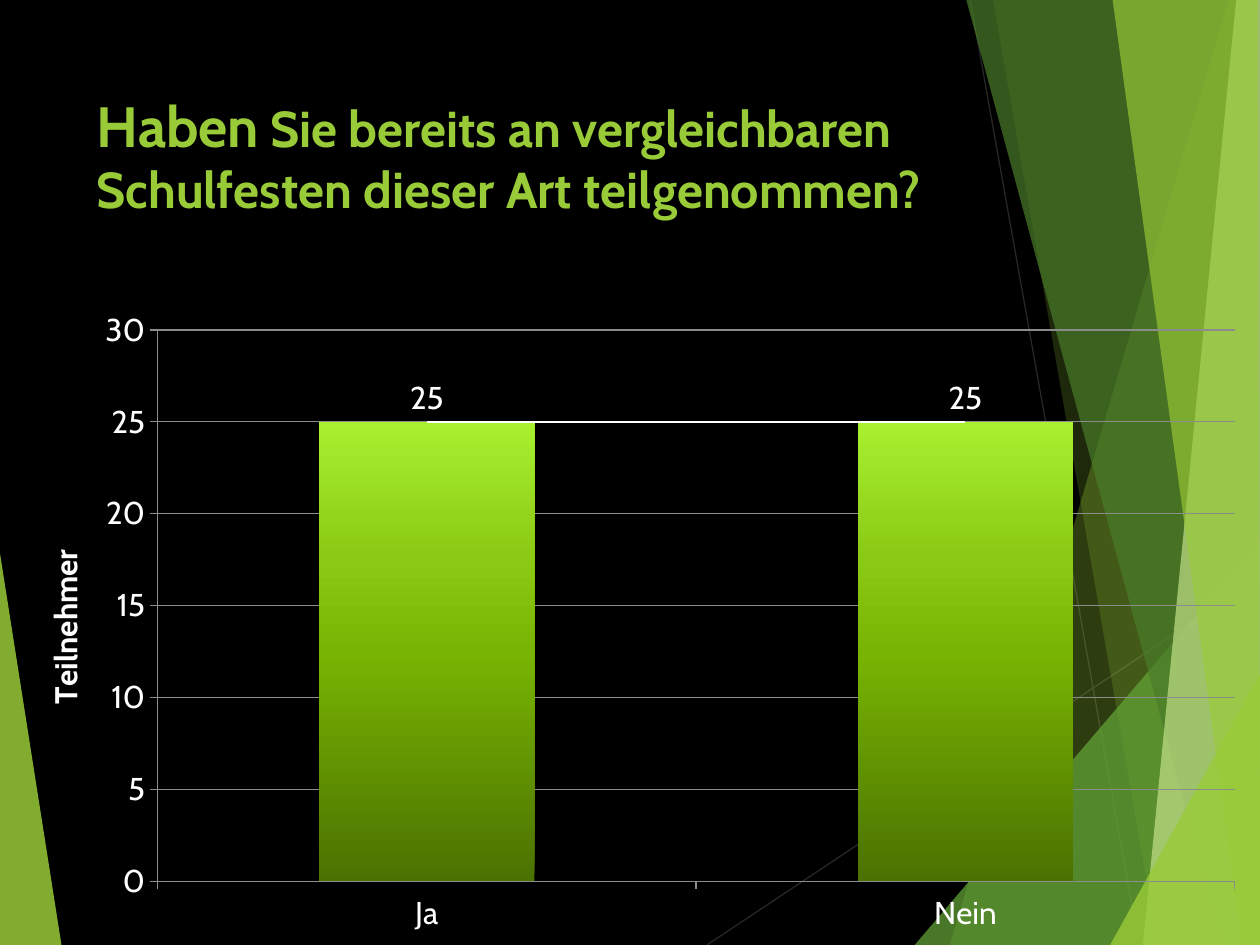
from dataclasses import dataclass

from lxml import etree
from pptx import Presentation
from pptx import util as u
from pptx.chart import data as chart_data
from pptx.dml.color import RGBColor
from pptx.enum import chart as charts, shapes, text
from pptx.oxml import ns, parse_xml

COLORS = {
    "black": "000000",
    "white": "FFFFFF",
    "hairline": "262626",
    "grid": "8C8C8C",
    "lime": "99CB38",
    "green": "63A537",
    "forest": "4A7C29",
    "pale": "C2E088",
}
BAR_STOPS = ((0, "4B7200"), (50, "78B403"), (70, "8AC914"), (100, "A8F030"))
FONT = "Cabin"
WIDTH, HEIGHT = 25.4, 19.05
Point = tuple[float, float]


@dataclass(frozen=True)
class Facet:
    color: str
    opacity: int
    corners: tuple[Point, ...]


@dataclass(frozen=True)
class Ray:
    start: Point
    end: Point


RAYS = (
    Ray((14.25, HEIGHT), (WIDTH, 11.63)),
    Ray((19.56, 0), (22.96, HEIGHT)),
)
FACETS = (
    Facet("lime", 85, ((0, 11.15), (1.24, HEIGHT), (0, HEIGHT))),
    Facet("lime", 30, ((24.77, 0), (19.15, HEIGHT), (WIDTH, HEIGHT), (WIDTH, 0))),
    Facet("lime", 20, ((20.02, 0), (23.34, HEIGHT), (WIDTH, HEIGHT), (WIDTH, 0))),
    Facet("green", 72, ((18.44, HEIGHT), (WIDTH, 10.9), (WIDTH, HEIGHT))),
    Facet("forest", 70, ((19.48, 0), (24.64, HEIGHT), (WIDTH, HEIGHT), (WIDTH, 0))),
    Facet("pale", 70, ((24.92, 0), (23.04, HEIGHT), (WIDTH, HEIGHT), (WIDTH, 0))),
    Facet("lime", 65, ((22.43, 0), (25.04, HEIGHT), (WIDTH, HEIGHT), (25.35, 0))),
    Facet("lime", 80, ((22.38, HEIGHT), (WIDTH, 13.59), (WIDTH, HEIGHT))),
)


def rgb(name: str) -> RGBColor:
    return RGBColor.from_string(COLORS[name])


def style_font(font, size: float, color: str, bold: bool = False) -> None:
    font.name, font.size, font.bold = FONT, u.Pt(size), bold
    font.color.rgb = rgb(color)


def draw_ray(slide, ray: Ray) -> None:
    line = slide.shapes.add_connector(
        shapes.MSO_CONNECTOR.STRAIGHT, *map(u.Cm, ray.start + ray.end)
    )
    line.line.color.rgb = rgb("hairline")
    line.line.width = u.Pt(0.75)
    etree.SubElement(line._element.spPr, ns.qn("a:effectLst"))


def draw_facet(slide, facet: Facet) -> None:
    first, *rest = [(u.Cm(x), u.Cm(y)) for x, y in facet.corners]
    outline = slide.shapes.build_freeform(*first)
    outline.add_line_segments(rest, close=True)
    pane = outline.convert_to_shape()
    pane.shadow.inherit = False
    pane.line.fill.background()
    pane.fill.solid()
    pane.fill.fore_color.rgb = rgb(facet.color)
    tint = pane._element.spPr.find(".//" + ns.qn("a:srgbClr"))
    etree.SubElement(tint, ns.qn("a:alpha"), val=str(facet.opacity * 1000))


def draw_question(slide) -> None:
    question = slide.shapes.add_textbox(
        u.Cm(1.7), u.Cm(1.7), u.Cm(17.63), u.Cm(3.66)
    ).text_frame
    question.word_wrap = True
    question.vertical_anchor = text.MSO_ANCHOR.TOP
    paragraph = question.paragraphs[0]
    for words, size in (
        ("Haben", 32.4),
        (" Sie bereits an vergleichbaren Schulfesten dieser Art teilgenommen?", 28.8),
    ):
        run = paragraph.add_run()
        run.text = words
        style_font(run.font, size, "lime", True)


def manual_layout(**settings: object):
    items = "".join(f'<c:{key} val="{value}"/>' for key, value in settings.items())
    return parse_xml(
        f'<c:layout {ns.nsdecls("c")}><c:manualLayout>{items}</c:manualLayout></c:layout>'
    )


def place_layout(parent, layout, index: int) -> None:
    for previous in parent.findall(ns.qn("c:layout")):
        parent.remove(previous)
    parent.insert(index, layout)


def style_bars(series) -> None:
    stops = "".join(
        f'<a:gs pos="{pos * 1000}"><a:srgbClr val="{color}"/></a:gs>'
        for pos, color in BAR_STOPS
    )
    series.format.fill.background()
    properties = series._element.find(ns.qn("c:spPr"))
    properties.replace(
        properties.find(ns.qn("a:noFill")),
        parse_xml(
            f'<a:gradFill {ns.nsdecls("a")} rotWithShape="1"><a:gsLst>{stops}</a:gsLst>'
            '<a:lin ang="16200000" scaled="0"/></a:gradFill>'
        ),
    )
    trend = parse_xml(
        f'<c:trendline {ns.nsdecls("c", "a")}><c:spPr><a:ln w="19050"><a:solidFill>'
        f'<a:srgbClr val="{COLORS["white"]}"/></a:solidFill></a:ln></c:spPr>'
        '<c:trendlineType val="linear"/><c:dispRSqr val="0"/><c:dispEq val="0"/>'
        "</c:trendline>"
    )
    series._element.find(ns.qn("c:cat")).addprevious(trend)


def draw_answers(slide) -> None:
    answers = chart_data.CategoryChartData()
    answers.categories = ["Ja", "Nein"]
    answers.add_series("Series 1", (25, 25))
    chart = slide.shapes.add_chart(
        charts.XL_CHART_TYPE.COLUMN_CLUSTERED,
        u.Cm(0), u.Cm(6), u.Cm(WIDTH), u.Cm(13.05), answers,
    ).chart
    chart.has_legend = chart.has_title = False
    style_font(chart.font, 18, "white")

    plot = chart.plots[0]
    plot.gap_width = 150
    plot.vary_by_categories = False
    style_bars(plot.series[0])
    labels = plot.series[0].data_labels
    labels.show_value = True
    labels.position = charts.XL_LABEL_POSITION.OUTSIDE_END
    style_font(labels.font, 18, "white")

    participants = chart.value_axis
    participants.minimum_scale, participants.maximum_scale = 0, 30
    participants.major_unit = 5
    participants.has_major_gridlines = True
    for axis in (chart.category_axis, participants):
        axis.major_tick_mark = charts.XL_TICK_MARK.OUTSIDE
        style_font(axis.tick_labels.font, 18, "white")
    for ruled in (chart.category_axis, participants, participants.major_gridlines):
        ruled.format.line.color.rgb = rgb("grid")
        ruled.format.line.width = u.Pt(0.75)

    heading = participants.axis_title
    heading.text_frame.text = "Teilnehmer"
    style_font(heading.text_frame.paragraphs[0].runs[0].font, 18, "white", True)
    heading.text_frame._txBody.bodyPr.set("rot", "-5400000")
    heading.text_frame._txBody.bodyPr.set("vert", "horz")
    place_layout(
        heading._element,
        manual_layout(xMode="edge", yMode="edge", x=0.03, y=0.38),
        1,
    )
    plot_area = chart._chartSpace.find(".//" + ns.qn("c:plotArea"))
    place_layout(
        plot_area,
        manual_layout(
            layoutTarget="inner", xMode="edge", yMode="edge",
            x=0.125, y=0.05, w=0.855, h=0.852,
        ),
        0,
    )


def main() -> None:
    deck = Presentation()
    deck.slide_width, deck.slide_height = u.Cm(WIDTH), u.Cm(HEIGHT)
    slide = deck.slides.add_slide(deck.slide_layouts[6])
    slide.background.fill.solid()
    slide.background.fill.fore_color.rgb = rgb("black")
    for ray in RAYS:
        draw_ray(slide, ray)
    for facet in FACETS:
        draw_facet(slide, facet)
    draw_question(slide)
    draw_answers(slide)
    deck.save("out.pptx")


if __name__ == "__main__":
    main()
